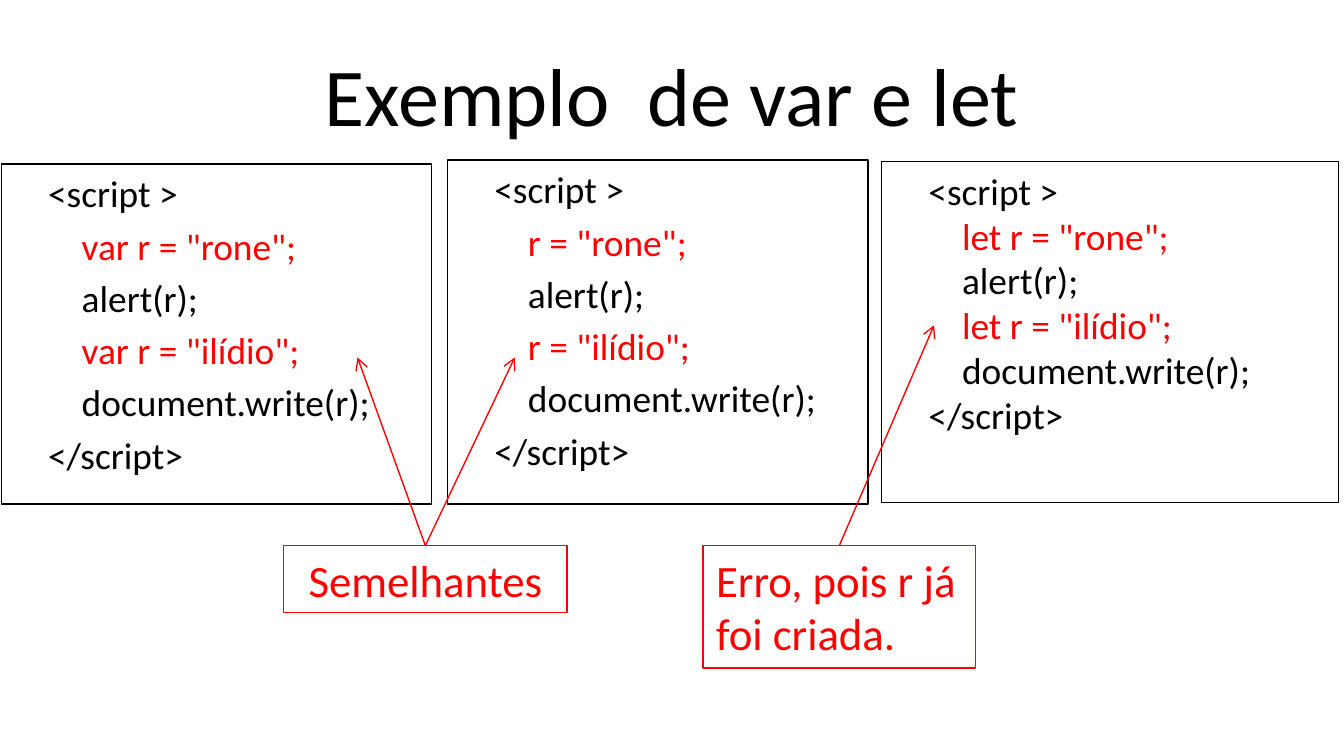
from lxml import etree
from pptx import Presentation
from pptx.dml.color import RGBColor
from pptx.enum.shapes import MSO_CONNECTOR
from pptx.enum.text import MSO_ANCHOR, PP_ALIGN
from pptx.oxml.ns import qn
from pptx.util import Inches, Pt

STRAIGHT = MSO_CONNECTOR.STRAIGHT
MIDDLE, TOP = MSO_ANCHOR.MIDDLE, MSO_ANCHOR.TOP
LEFT, CENTER = PP_ALIGN.LEFT, PP_ALIGN.CENTER
BLACK = RGBColor(0, 0, 0)
RED = RGBColor(255, 0, 0)
INDENT = 0.25
TOP_SIDE = 0


def add_run(p, text, size, color):
    r = p.add_run()
    r.text = text
    for name, value in {"name": "Calibri", "size": Pt(size), "bold": False}.items():
        setattr(r.font, name, value)
    r.font.color.rgb = color


def place(sp, box):
    for name, value in zip(("left", "top", "width", "height"), box):
        setattr(sp, name, Inches(value))


def add_title(s, box, text):
    sp = s.shapes.title
    place(sp, box)
    tf = sp.text_frame
    for name, value in {"word_wrap": True, "vertical_anchor": MIDDLE}.items():
        setattr(tf, name, value)
    p = tf.paragraphs[0]
    p.alignment = CENTER
    add_run(p, text, 44, BLACK)


def add_frame(s, box, color):
    sp = s.shapes.add_textbox(*map(Inches, box))
    sp.line.color.rgb = color
    sp.line.width = Pt(0.75)
    for name, value in {"word_wrap": True, "vertical_anchor": TOP}.items():
        setattr(sp.text_frame, name, value)
    return sp


def add_code(s, box, keyword, gap):
    lines = [
        (1, "<script >", BLACK),
        (2, f'{keyword}r = "rone";', RED),
        (2, "alert(r);", BLACK),
        (2, f'{keyword}r = "ilídio";', RED),
        (2, "document.write(r);", BLACK),
        (1, "</script>", BLACK),
    ]
    tf = add_frame(s, box, BLACK).text_frame
    for i, (level, text, color) in enumerate(lines):
        p = tf.add_paragraph() if i else tf.paragraphs[0]
        p.alignment = LEFT
        p.space_before = Pt(gap if i else 0)
        pPr = p._p.get_or_add_pPr()
        pPr.set("marL", str(Inches(level * INDENT)))
        pPr.set("indent", "0")
        add_run(p, text, 20, color)


def add_note(s, box, text, align, targets):
    note = add_frame(s, box, RED)
    p = note.text_frame.paragraphs[0]
    p.alignment = align
    add_run(p, text, 24, RED)
    for x, y in targets:
        arrow = s.shapes.add_connector(STRAIGHT, 0, 0, Inches(x), Inches(y))
        arrow.begin_connect(note, TOP_SIDE)
        arrow.line.color.rgb = RED
        arrow.line.width = Pt(0.75)
        etree.SubElement(arrow.line._get_or_add_ln(), qn("a:tailEnd"), type="arrow")
        etree.SubElement(arrow._element.spPr, qn("a:effectLst"))


def main():
    prs = Presentation()
    prs.slide_width = Inches(10)
    prs.slide_height = prs.slide_width * 9 // 16
    s = prs.slides.add_slide(prs.slide_layouts[5])
    add_title(s, (0.5, 0.23, 9, 0.94), "Exemplo  de var e let")
    for box, keyword, gap in (
        ((0.01, 1.22, 3.2, 2.53), "var ", 4),
        ((3.33, 1.19, 3.13, 2.56), "", 4),
        ((6.56, 1.2, 3.4, 2.54), "let ", 0),
    ):
        add_code(s, box, keyword, gap)
    add_note(s, (2.11, 4.06, 2.11, 0.5), "Semelhantes", CENTER,
             [(2.66, 2.66), (3.83, 2.66)])
    add_note(s, (5.23, 4.06, 2.03, 0.91), "Erro, pois r já foi criada.", LEFT,
             [(6.95, 2.42)])
    prs.save("out.pptx")


if __name__ == "__main__":
    main()
